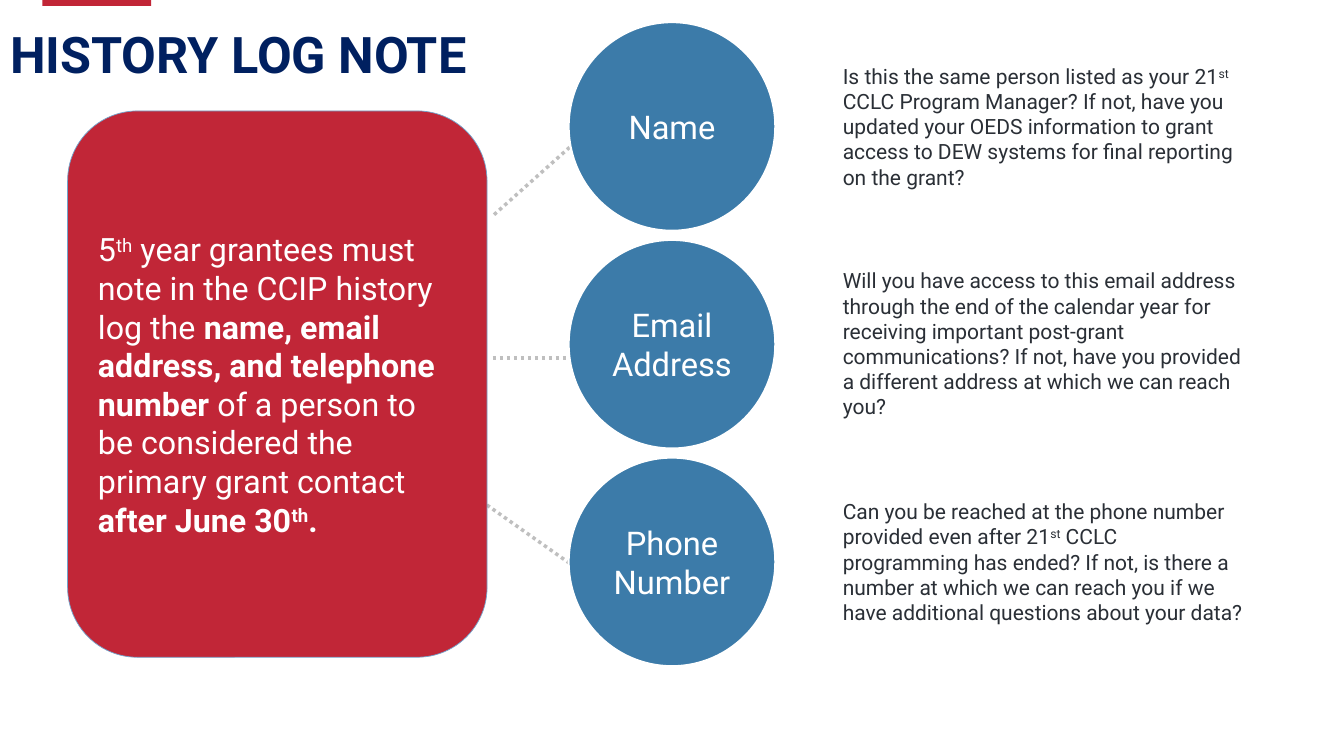
from lxml import etree
from pptx import Presentation
from pptx.dml.color import RGBColor
from pptx.enum.dml import MSO_LINE
from pptx.enum.shapes import MSO_CONNECTOR, MSO_SHAPE
from pptx.enum.text import MSO_ANCHOR, MSO_AUTO_SIZE, PP_ALIGN
from pptx.oxml.ns import qn
from pptx.util import Inches, Pt

RECTANGLE = MSO_SHAPE.RECTANGLE
ROUNDED = MSO_SHAPE.ROUNDED_RECTANGLE
CIRCLE = MSO_SHAPE.FLOWCHART_CONNECTOR
STRAIGHT = MSO_CONNECTOR.STRAIGHT
DOTTED = MSO_LINE.ROUND_DOT
MIDDLE, TOP = MSO_ANCHOR.MIDDLE, MSO_ANCHOR.TOP
LEFT, CENTER = PP_ALIGN.LEFT, PP_ALIGN.CENTER
GROW = MSO_AUTO_SIZE.SHAPE_TO_FIT_TEXT

WIDTH, HEIGHT = Inches(13.33), Inches(7.5)
TITLE_ONLY = 5
FONT = "Roboto"
RED = RGBColor(0xC1, 0x26, 0x37)
BLUE = RGBColor(0x3C, 0x7B, 0xA9)
PALE_BLUE = RGBColor(0x73, 0xA4, 0xCC)
NAVY = RGBColor(0x00, 0x20, 0x60)
GRAY = RGBColor(0xBF, 0xBF, 0xBF)
INK = RGBColor(0x2A, 0x2F, 0x36)
WHITE = RGBColor(0xFF, 0xFF, 0xFF)

CIRCLE_TOP, CIRCLE_PITCH = 2.93, 28.8
MESSAGE = [
    ("5", ""),
    ("th", "super"),
    (" year grantees must note in the CCIP history log the ", ""),
    ("name, email address, and telephone number ", "bold"),
    ("of a person to be considered the primary grant contact ", ""),
    ("after June 30", "bold"),
    ("th", "bold super"),
    (".", "bold"),
]
CONTACTS = [
    ("Name", 7.73, 31.58, [
        ("Is this the same person listed as your 21", ""),
        ("st", "super"),
        (" CCLC Program Manager? If not, have you updated your OEDS information "
         "to grant access to DEW systems for final reporting on the grant?", ""),
    ]),
    ("Email Address", 34.8, 32.18, [
        ("Will you have access to this email address through the end of the "
         "calendar year for receiving important post-grant communications? If not, "
         "have you provided a different address at which we can reach you?", ""),
    ]),
    ("Phone Number", 65.33, 31.58, [
        ("Can you be reached at the phone number provided even after 21", ""),
        ("st", "super"),
        (" CCLC programming has ended? If not, is there a number at which we can "
         "reach you if we have additional questions about your data?", ""),
    ]),
]
LINKS = [
    (36.76, 28.4, 44.41, 16.27),
    (36.68, 47.33, 44.86, 47.33),
    (36.23, 66.8, 43.89, 76.4),
]


def place(left, top, width, height):
    """Turn percentages of the slide into lengths."""
    return (round(WIDTH * left / 100), round(HEIGHT * top / 100),
            round(WIDTH * width / 100), round(HEIGHT * height / 100))


def write(box, spans, size, color, align=LEFT, anchor=MIDDLE):
    """Fill a box with one paragraph of styled runs."""
    frame = box.text_frame
    frame.word_wrap = True
    frame.vertical_anchor = anchor
    para = frame.paragraphs[0]
    para.alignment = align
    for text, style in spans:
        span = para.add_run()
        span.text = text
        span.font.name = FONT
        span.font.size = Pt(size)
        span.font.color.rgb = color
        span.font.bold = "bold" in style
        if "super" in style:
            span._r.get_or_add_rPr().set("baseline", "30000")
    return para


def add_title(page, text):
    """Move and format the title placeholder."""
    title = page.shapes.title
    title.left, title.top, title.width, title.height = place(0, 2.93, 40.51, 9.33)
    para = write(title, [(text, "bold")], 36, NAVY)
    para.line_spacing = 0.9


def add_block(page, kind, area, fill, line=None, weight=0):
    """Add a filled shape with an optional outline."""
    block = page.shapes.add_shape(kind, *place(*area))
    block.shadow.inherit = False
    block.fill.solid()
    block.fill.fore_color.rgb = fill
    if line is None:
        block.line.fill.background()
    else:
        block.line.color.rgb = line
        block.line.width = Pt(weight)
    return block


def add_link(page, ends):
    """Add a dotted line between two points."""
    link = page.shapes.add_connector(STRAIGHT, *place(*ends))
    link.line.color.rgb = GRAY
    link.line.width = Pt(2.5)
    link.line.dash_style = DOTTED
    etree.SubElement(link._element.spPr, qn("a:effectLst"))


def add_contact(page, row, label, top, width, question):
    """Add a labelled circle and the question beside it."""
    area = (42.31, CIRCLE_TOP + row * CIRCLE_PITCH, 15.38, 27.6)
    circle = add_block(page, CIRCLE, area, BLUE, WHITE, 1.5)
    write(circle, [(label, "")], 23.3, WHITE, CENTER)
    box = page.shapes.add_textbox(*place(61.97, top, width, 18.13))
    write(box, question, 15, INK, anchor=TOP)
    box.text_frame.auto_size = GROW


def main():
    """Build and save the slide."""
    deck = Presentation()
    deck.slide_width, deck.slide_height = WIDTH, HEIGHT
    page = deck.slides.add_slide(deck.slide_layouts[TITLE_ONLY])
    add_title(page, "HISTORY LOG NOTE")
    add_block(page, RECTANGLE, (3.15, 0, 8.1, 0.8), RED)
    for ends in LINKS:
        add_link(page, ends)
    panel = add_block(page, ROUNDED, (5.03, 14.67, 31.21, 72.27), RED, PALE_BLUE, 0.5)
    write(panel, MESSAGE, 23, WHITE)
    for row, contact in enumerate(CONTACTS):
        add_contact(page, row, *contact)
    deck.save("out.pptx")


if __name__ == "__main__":
    main()
